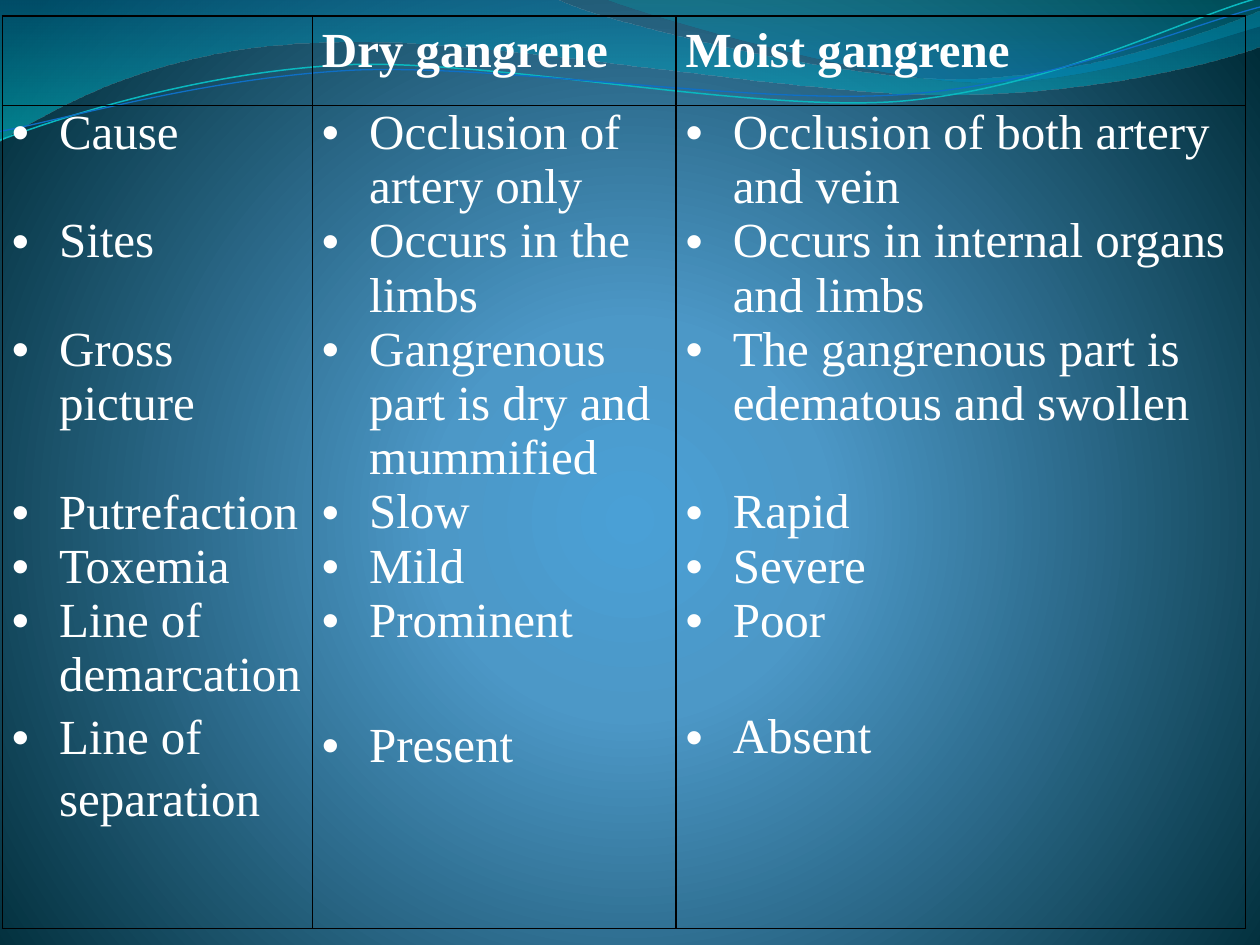
from lxml import etree
from pptx import Presentation
from pptx.dml.color import RGBColor
from pptx.oxml import parse_xml
from pptx.oxml.ns import nsdecls, qn
from pptx.util import Pt

WHITE = RGBColor(0xFF, 0xFF, 0xFF)
BLACK = RGBColor(0x00, 0x00, 0x00)
SKY = RGBColor(0x4A, 0xA0, 0xD6)
STEEL = RGBColor(0x4C, 0x98, 0xC7)
NIGHT = RGBColor(0x00, 0x2C, 0x38)
OCEAN = RGBColor(0x00, 0x74, 0xA1)
AQUA = RGBColor(0x00, 0xC6, 0xCF)
TEAL = RGBColor(0x00, 0xA1, 0xA9)
BLUE = RGBColor(0x00, 0x8B, 0xBF)
CYAN_LINE = RGBColor(0x0A, 0xB8, 0xBF)
BLUE_LINE = RGBColor(0x0F, 0x6F, 0xC6)

FONT = "Times New Roman"
TEXT_SIZE = Pt(28)
LINE = 31  # height of one text line, in points
DOWNWARD = '<a:lin ang="5400000" scaled="1"/>'
CIRCULAR = ('<a:path path="circle"><a:fillToRect l="10000" t="110000" '
            'r="10000" b="100000"/></a:path>')


def set_gradient(fill, parent, stops, direction):
    """Fill with stops of (position %, colour, opacity %)."""
    fill.solid()
    stop_list = "".join(
        f'<a:gs pos="{position * 1000}"><a:srgbClr val="{color}">'
        f'<a:alpha val="{opacity * 1000}"/></a:srgbClr></a:gs>'
        for position, color, opacity in stops)
    gradient = parse_xml(f'<a:gradFill {nsdecls("a")} rotWithShape="1">'
                         f'<a:gsLst>{stop_list}</a:gsLst>{direction}</a:gradFill>')
    parent.replace(parent.find(qn("a:solidFill")), gradient)


def add_wave(shapes, start, segments, close):
    """Draw segments of one point (straight) or three points (cubic Bézier)."""
    builder = shapes.build_freeform(Pt(start[0]), Pt(start[1]))
    builder.add_line_segments([(Pt(x), Pt(y)) for segment in segments
                               for x, y in segment], close=close)
    wave = builder.convert_to_shape()
    wave.shadow.inherit = False
    # Turn each run of three line steps into one Bézier step
    steps = iter(wave.element.findall(".//" + qn("a:lnTo")))
    for segment in segments:
        first = next(steps)
        if len(segment) == 3:
            first.tag = qn("a:cubicBezTo")
            for step in (next(steps), next(steps)):
                first.append(step[0])
                step.getparent().remove(step)
    return wave


deck = Presentation()
deck.slide_width, deck.slide_height = Pt(720), Pt(540)
slide = deck.slides.add_slide(deck.slide_layouts[6])

background_fill = slide.background.fill
background_fill.solid()
set_gradient(background_fill, slide.element.find(".//" + qn("p:bgPr")),
             [(0, SKY, 100), (25, STEEL, 100), (100, NIGHT, 100)], CIRCULAR)

# Translucent waves along the top edge
bands = [
    ((0, 0),
     [[(317, -1)],
      [(343, 12), (478, 45), (546, 45)],
      [(614, 45), (690, 19), (720, 6)],
      [(721, 26)],
      [(708, 32), (626, 55), (537, 54)],
      [(447, 54), (275, 20), (185, 24)],
      [(93, 26), (33, 60), (-1, 81)]],
     [(0, OCEAN, 45), (100, AQUA, 55)]),
    ((345, -1),
     [[(367, 8), (491, 45), (554, 47)],
      [(616, 50), (692, 23), (720, 15)],
      [(720, 0)]],
     [(0, TEAL, 30), (80, BLUE, 45)]),
]
for start, segments, stops in bands:
    band = add_wave(slide.shapes, start, segments, True)
    set_gradient(band.fill, band.element.spPr, stops, DOWNWARD)
    band.line.fill.background()

# Thin strands, tilted slightly upwards
strands = [
    ((-1.4, 63.1),
     [[(34.2, 51.7), (114.3, 29.4), (199.4, 29.4)],
      [(284.4, 30.5), (425.9, 67.2), (512, 65.2)],
      [(599.3, 62.3), (676, 25.9), (720.6, 15.9)]],
     CYAN_LINE, 0.85),
    ((-1.1, 58.1),
     [[(33.1, 53.7), (118.2, 32.6), (204.3, 32.7)],
      [(290.3, 33.7), (429.1, 63.3), (515.3, 61.4)],
      [(601.5, 59.4), (678.9, 30), (721.4, 21)]],
     BLUE_LINE, 0.75),
]
for start, segments, color, width in strands:
    strand = add_wave(slide.shapes, start, segments, False)
    strand.rotation = 357.3
    strand.fill.background()
    strand.line.color.rgb = color
    strand.line.width = Pt(width)

# Each column: heading, then items of (text, space before, line spacing)
columns = [
    ("", [("Cause", 0, 1), ("Sites", LINE, 1), ("Gross picture", LINE, 1),
          ("Putrefaction", LINE, 1), ("Toxemia", 0, 1),
          ("Line of demarcation", 0, 1), ("Line of separation", 0, 1.15)]),
    ("Dry gangrene",
     [("Occlusion of artery only", 0, 1), ("Occurs in the limbs", 0, 1),
      ("Gangrenous part is dry and mummified", 0, 1), ("Slow", 0, 1),
      ("Mild", 0, 1), ("Prominent", 0, 1), ("Present", LINE * 1.15, 1.15)]),
    ("Moist gangrene",
     [("Occlusion of both artery and vein", 0, 1),
      ("Occurs in internal organs and limbs", 0, 1),
      ("The gangrenous part is edematous and swollen", 0, 1),
      ("Rapid", LINE, 1), ("Severe", 0, 1), ("Poor", 0, 1),
      ("Absent", LINE, 1.15)]),
]
column_widths, row_heights = [177.2, 207.8, 325.4], [51.3, 470.3]
frame = slide.shapes.add_table(2, 3, Pt(1.4), Pt(9.1),
                               Pt(sum(column_widths)), Pt(sum(row_heights)))
table = frame.table
table.first_row = table.horz_banding = False
for column, width in zip(table.columns, column_widths):
    column.width = Pt(width)
for row, height in zip(table.rows, row_heights):
    row.height = Pt(height)

for cell in table.iter_cells():
    cell.margin_left = cell.margin_right = Pt(5.4)
    cell.margin_top = cell.margin_bottom = 0
    properties = cell._tc.get_or_add_tcPr()
    for side in ("lnL", "lnR", "lnT", "lnB"):
        properties.append(parse_xml(
            f'<a:{side} {nsdecls("a")} w="{Pt(1)}"><a:solidFill>'
            f'<a:srgbClr val="{BLACK}"/></a:solidFill></a:{side}>'))
    cell.fill.background()

for index, (heading, items) in enumerate(columns):
    entries = [(0, heading, 0, 1.15)] + [(1, *item) for item in items]
    for position, (row, text, space, spacing) in enumerate(entries):
        text_frame = table.cell(row, index).text_frame
        para = text_frame.paragraphs[0] if position < 2 else text_frame.add_paragraph()
        para.text = text
        para.line_spacing = spacing
        para.space_before = Pt(space)
        if row == 1:
            layout = para._p.get_or_add_pPr()
            layout.set("marL", str(Pt(27)))
            layout.set("indent", str(-Pt(27)))
            etree.SubElement(layout, qn("a:buFont")).set("typeface", "Arial")
            etree.SubElement(layout, qn("a:buChar")).set("char", "•")
        para.font.name = FONT
        para.font.size = TEXT_SIZE
        para.font.bold = row == 0
        para.font.color.rgb = WHITE

deck.save("out.pptx")
